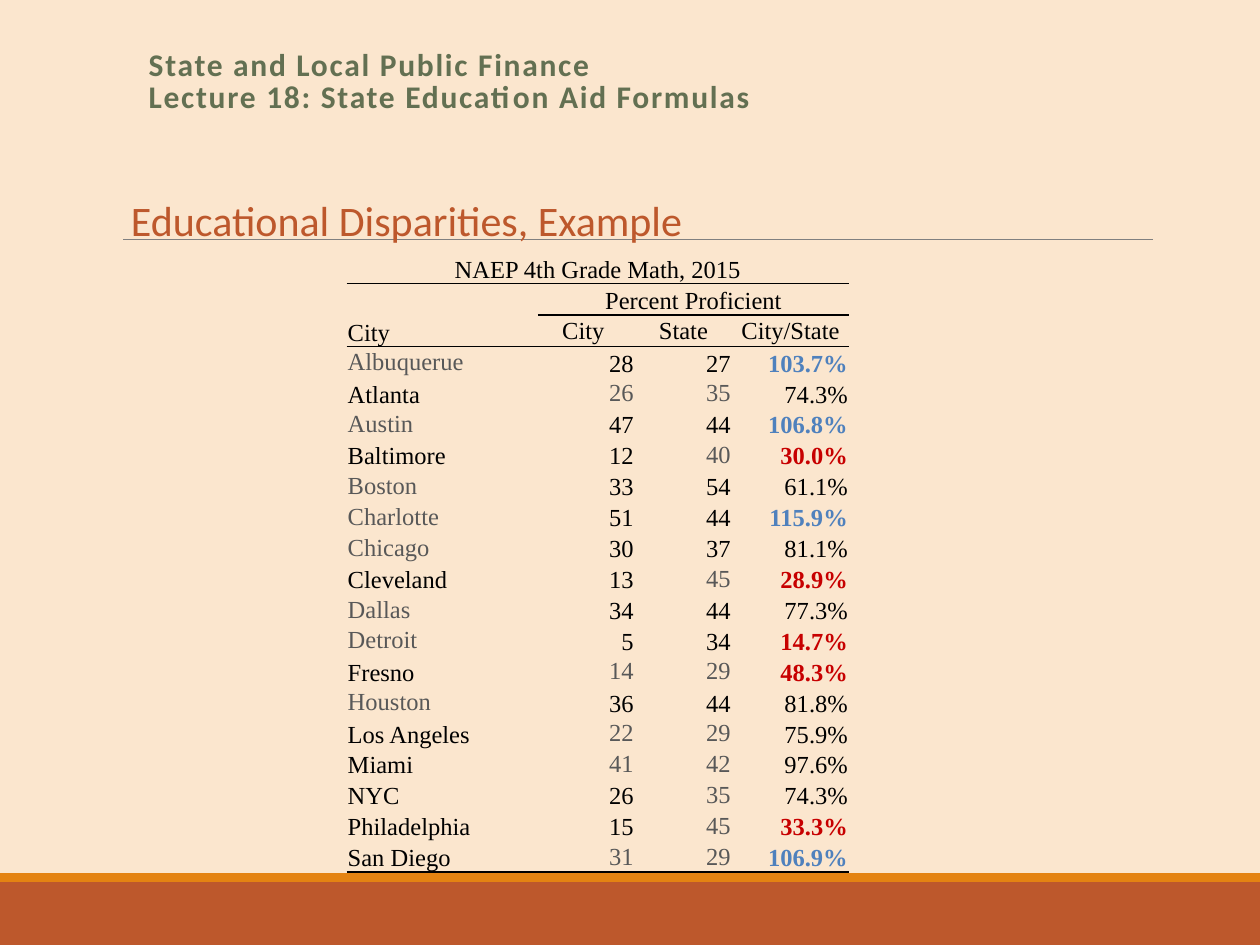
import pptx
import pptx.dml.color
import pptx.enum.shapes
import pptx.enum.text
import pptx.oxml
import pptx.oxml.ns
import pptx.util

Inches = pptx.util.Inches
Pt = pptx.util.Pt
RGBColor = pptx.dml.color.RGBColor
Align = pptx.enum.text.PP_ALIGN
Anchor = pptx.enum.text.MSO_ANCHOR
AutoSize = pptx.enum.text.MSO_AUTO_SIZE

CREAM = RGBColor(0xFB, 0xE6, 0xCE)
RUST = RGBColor(0xBD, 0x58, 0x2C)
ORANGE = RGBColor(0xE4, 0x83, 0x12)
GREEN = RGBColor(0x63, 0x70, 0x52)
RULE_GREY = RGBColor(0x80, 0x80, 0x80)
TEXT_GREY = RGBColor(0x58, 0x58, 0x58)
BLACK = RGBColor(0, 0, 0)
BLUE = RGBColor(0x4F, 0x81, 0xBD)
RED = RGBColor(0xC7, 0, 0)


def style_text(para, color, para_format, font_format):
    for name, value in para_format.items():
        setattr(para, name, value)
    for span in para.runs:
        span.font.color.rgb = color
        for name, value in font_format.items():
            setattr(span.font, name, value)


def fill_cell(cell, text, align, anchor, color=BLACK, bold=False):
    cell.text = text
    cell.vertical_anchor = anchor
    style_text(cell.text_frame.paragraphs[0], color, {"alignment": align},
               {"name": "Times New Roman", "size": Pt(14), "bold": bold})


deck = pptx.Presentation()
deck.slide_width = Inches(10)
deck.slide_height = Inches(7.5)
page = deck.slides.add_slide(deck.slide_layouts[5])
page.background.fill.solid()
page.background.fill.fore_color.rgb = CREAM

for top, height, color in [(7, 0.5, RUST), (6.93, 0.07, ORANGE)]:
    band = page.shapes.add_shape(pptx.enum.shapes.MSO_SHAPE.RECTANGLE,
                                 0, Inches(top), Inches(10), Inches(height))
    band.shadow.inherit = False
    band.fill.solid()
    band.fill.fore_color.rgb = color
    band.line.fill.background()

rule = page.shapes.add_connector(pptx.enum.shapes.MSO_CONNECTOR.STRAIGHT,
                                 Inches(0.98), Inches(1.9), Inches(9.15), Inches(1.9))
rule.line.color.rgb = RULE_GREY
rule.line.width = Pt(0.5)
rule._element.spPr.append(pptx.oxml.parse_xml(
    f'<a:effectLst {pptx.oxml.ns.nsdecls("a")}/>'))

title = page.shapes.title
title_place = {"left": Inches(1.08), "top": Inches(0.33),
               "width": Inches(8.25), "height": Inches(0.65)}
for name, value in title_place.items():
    setattr(title, name, value)
title.text_frame.text = "State and Local Public Finance\vLecture 18: State Education Aid Formulas"
title.text_frame.auto_size = AutoSize.NONE
title.text_frame.vertical_anchor = Anchor.MIDDLE
title_para = title.text_frame.paragraphs[0]
style_text(title_para, GREEN, {"alignment": Align.LEFT, "line_spacing": 0.85},
           {"name": "Calibri", "size": Pt(18), "bold": True})
for span in title_para.runs:
    span.font._element.set("spc", "100")

heading = page.shapes.add_textbox(Inches(0.94), Inches(1.54), Inches(4.62), Inches(0.46))
heading.text_frame.word_wrap = False
heading.text_frame.auto_size = AutoSize.SHAPE_TO_FIT_TEXT
heading.text_frame.text = "Educational Disparities, Example"
style_text(heading.text_frame.paragraphs[0], RUST,
           {"line_spacing": 0.9, "space_before": Pt(6.8), "space_after": Pt(1.1)},
           {"name": "Calibri", "size": Pt(24)})

# Each entry: city, city percent, state percent, grey columns
scores = [
    ("Albuquerue", 28, 27, [0]),
    ("Atlanta", 26, 35, [1, 2]),
    ("Austin", 47, 44, [0]),
    ("Baltimore", 12, 40, [2]),
    ("Boston", 33, 54, [0]),
    ("Charlotte", 51, 44, [0]),
    ("Chicago", 30, 37, [0]),
    ("Cleveland", 13, 45, [2]),
    ("Dallas", 34, 44, [0]),
    ("Detroit", 5, 34, [0]),
    ("Fresno", 14, 29, [1, 2]),
    ("Houston", 36, 44, [0]),
    ("Los Angeles", 22, 29, [1, 2]),
    ("Miami", 41, 42, [1, 2]),
    ("NYC", 26, 35, [2]),
    ("Philadelphia", 15, 45, [2]),
    ("San Diego", 31, 29, [1, 2]),
]
header_rows = 3
row_count = header_rows + len(scores)
frame = page.shapes.add_table(row_count, 4, Inches(2.75), Inches(2), Inches(4), Inches(4.92))
table = frame.table
for name in ("first_row", "horz_banding"):
    setattr(table, name, False)
style_id = table._tbl.tblPr.find(pptx.oxml.ns.qn("a:tableStyleId"))
style_id.text = "{2D5ABB26-0587-4C30-8999-92F81FD0307C}"
for column, width in zip(table.columns, [1.52, 0.77, 0.77, 0.93]):
    column.width = Inches(width)

header_height = Inches(0.25)
body_height = (Inches(4.92) - header_rows * header_height) // len(scores)
ruled_columns = {0: range(4), 1: range(1, 4), 2: range(4), row_count - 1: range(4)}
cell_format = {"margin_left": Inches(0.01), "margin_right": Inches(0.01),
               "margin_top": Inches(0.01), "margin_bottom": 0}
for row_index, row in enumerate(table.rows):
    row.height = header_height if row_index < header_rows else body_height
    for column_index, cell in enumerate(row.cells):
        for name, value in cell_format.items():
            setattr(cell, name, value)
        cell.fill.background()
        style_text(cell.text_frame.paragraphs[0], BLACK, {}, {})
        cell.text_frame.paragraphs[0].font.size = Pt(14)
        if column_index in ruled_columns.get(row_index, []):
            cell._tc.tcPr.insert(0, pptx.oxml.parse_xml(
                f'<a:lnB {pptx.oxml.ns.nsdecls("a")} w="12700"><a:solidFill>'
                f'<a:srgbClr val="{BLACK}"/></a:solidFill></a:lnB>'))

table.cell(0, 0).merge(table.cell(0, 3))
table.cell(1, 1).merge(table.cell(1, 3))
fill_cell(table.cell(0, 0), "NAEP 4th Grade Math, 2015", Align.CENTER, Anchor.BOTTOM)
fill_cell(table.cell(1, 1), "Percent Proficient", Align.CENTER, Anchor.BOTTOM)
fill_cell(table.cell(2, 0), "City", Align.LEFT, Anchor.BOTTOM)
for column_index, label in enumerate(["City ", "State", "City/State"], start=1):
    fill_cell(table.cell(2, column_index), label, Align.CENTER, Anchor.MIDDLE)

for row_index, (city, city_score, state_score, grey_columns) in enumerate(scores, start=header_rows):
    for column_index, value in enumerate([city, city_score, state_score]):
        grey = column_index in grey_columns
        fill_cell(table.cell(row_index, column_index), str(value),
                  Align.RIGHT if column_index else Align.LEFT,
                  Anchor.MIDDLE if grey else Anchor.BOTTOM,
                  TEXT_GREY if grey else BLACK)
    ratio = city_score / state_score
    color = BLUE if ratio > 1 else RED if ratio < 0.5 else BLACK
    fill_cell(table.cell(row_index, 3), f"{ratio:.1%}", Align.RIGHT, Anchor.BOTTOM,
              color, color != BLACK)

deck.save("out.pptx")
